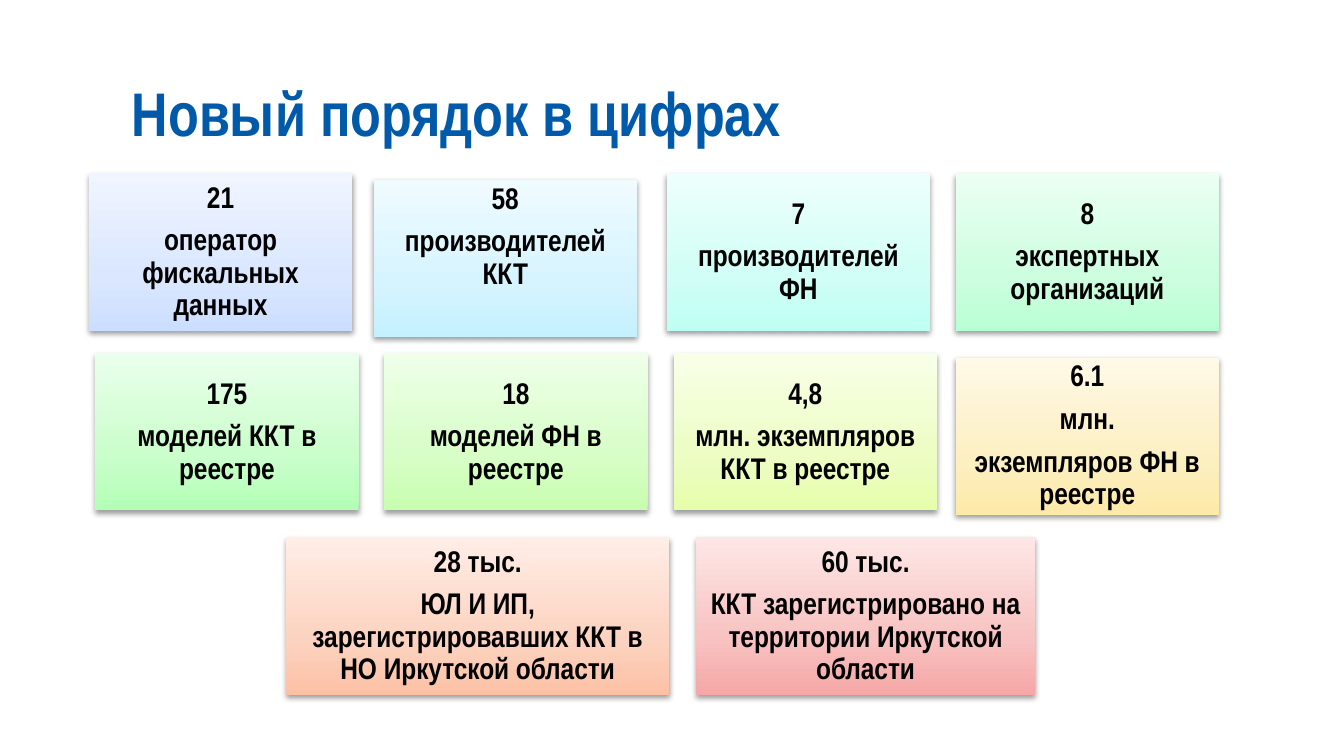
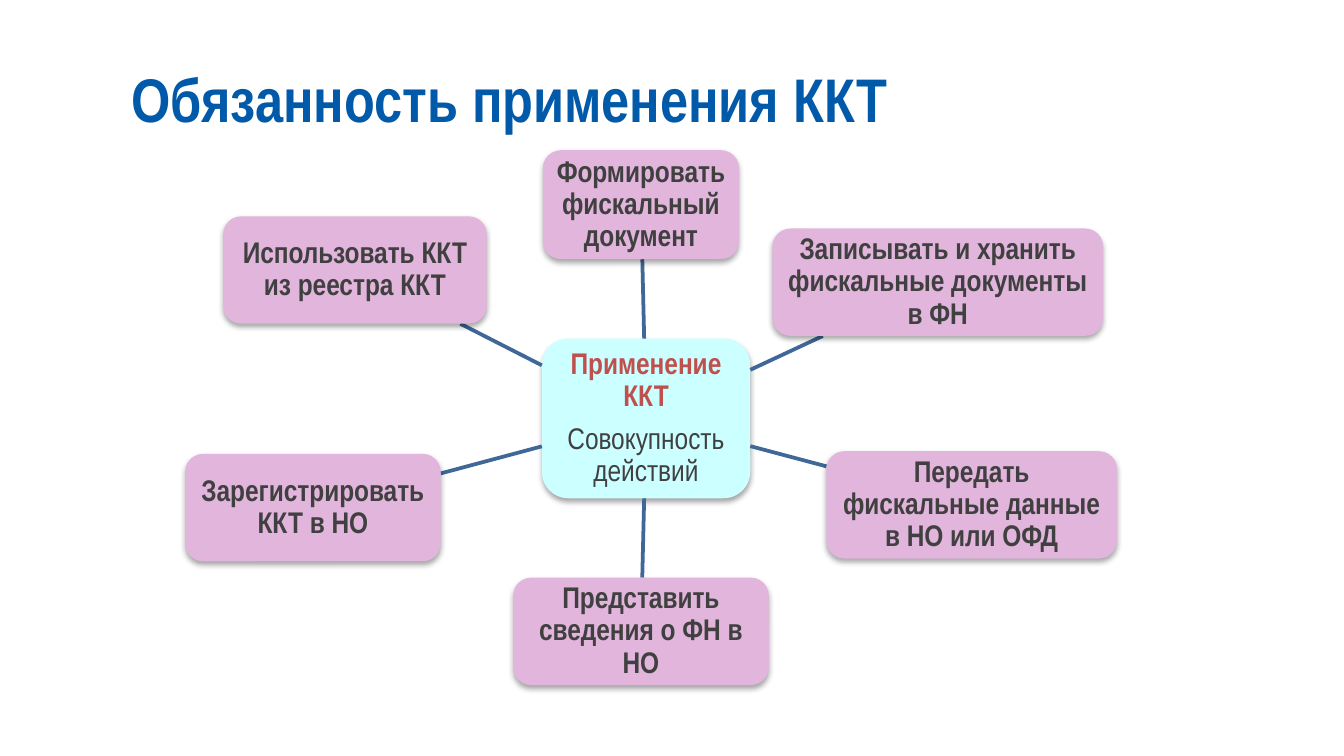
from copy import deepcopy

from lxml.etree import SubElement
from pptx import Presentation
from pptx.dml.color import RGBColor
from pptx.enum.shapes import MSO_CONNECTOR as CONNECTOR, MSO_SHAPE as SHAPE
from pptx.enum.text import MSO_ANCHOR as ANCHOR, MSO_AUTO_SIZE as AUTO, PP_ALIGN as ALIGN
from pptx.oxml.ns import qn
from pptx.util import Cm, Pt

FONT = "Arial Narrow"
TITLE_BLUE, BLACK, GREY, RED = "005AA9", "000000", "404040", "C0504D"
HUB_FILL, NODE_FILL, LINE_BLUE = "CCFFFF", "E1B5DC", "3F6797"

# All places are in centimetres: left, top, width, height.
CARD_W, CARD_H = 4.98, 2.97
CARD_INSET, NODE_INSET = 0.18, 0.1
TEXT_SIZE, PARA_GAP = 16, 5.6

# left, top, width, gradient from bottom to top, lines, extra bottom inset
CARDS = [
    (1.68, 3.28, CARD_W, ("CCDEFF", "DAE7FF", "F0F5FF"),
     ["21", "оператор фискальных данных"], 0),
    (7.06, 3.4, CARD_W, ("C5F0FF", "D6F4FF", "EFFBFF"),
     ["58", "производителей ККТ"], 0.81),
    (12.6, 3.28, CARD_W, ("BFFFF3", "D1FEF6", "EDFFFC"),
     ["7", "производителей ФН"], 0),
    (18.06, 3.28, CARD_W, ("B9FFD4", "CDFEE0", "EBFFF3"),
     ["8", "экспертных организаций"], 0),
    (1.8, 6.68, CARD_W, ("B4FFB6", "CAFECB", "EAFFEB"),
     ["175", "моделей ККТ в реестре"], 0),
    (7.26, 6.68, CARD_W, ("C8FEAF", "D7FEC7", "EFFFE9"),
     ["18", "моделей ФН в реестре"], 0),
    (12.73, 6.68, CARD_W, ("E6FEAB", "EDFDC4", "F8FFE8"),
     ["4,8", "млн. экземпляров ККТ в реестре"], 0),
    (18.06, 6.76, CARD_W, ("FDEAA8", "FCEFC2", "FFF9E7"),
     ["6.1", "млн.", "экземпляров ФН в реестре"], 0),
    (5.41, 10.16, 7.24, ("FCC1A5", "FCD3C0", "FFEDE6"),
     ["28 тыс.", "ЮЛ И ИП, зарегистрировавших ККТ в НО Иркутской области"], 0),
    (13.16, 10.16, 6.4, ("F6A7A6", "F7C2C1", "FDE7E6"),
     ["60 тыс.", "ККТ зарегистрировано на территории Иркутской области"], 0),
]

HUB = (10.24, 6.4, 3.94, 3.02)
HUB_TEXT = [("Применение ККТ", RED, True), ("Совокупность действий", GREY, False)]
NODES = [
    ((10.26, 2.84, 3.71, 2.06), "Формировать фискальный документ"),
    ((14.6, 4.32, 6.25, 2.03), "Записывать и хранить фискальные документы в ФН"),
    ((15.62, 8.53, 5.49, 2.03), "Передать фискальные данные в НО или ОФД"),
    ((9.7, 10.92, 4.83, 2.03), "Представить сведения о ФН в НО"),
    ((3.5, 8.58, 4.83, 2.03), "Зарегистрировать ККТ в НО"),
    ((4.22, 4.09, 4.98, 2.03), "Использовать ККТ из реестра ККТ"),
]


def rgb(color):
    return RGBColor.from_string(color)


def add_run(p, text, size, color, bold):
    r = p.add_run()
    r.text = text
    r.font.name, r.font.size, r.font.bold = FONT, Pt(size), bold
    r.font.color.rgb = rgb(color)


def set_frame(tf, side, top, bottom):
    tf.word_wrap, tf.auto_size = True, AUTO.NONE
    tf.vertical_anchor = ANCHOR.MIDDLE
    tf.margin_left = tf.margin_right = Cm(side)
    tf.margin_top, tf.margin_bottom = Cm(top), Cm(bottom)


def add_titled_slide(prs, title, height):
    s = prs.slides.add_slide(prs.slide_layouts[5])
    sp = s.shapes.title
    sp.left, sp.top, sp.width, sp.height = map(Cm, (2.26, 1.02, 20.4, height))
    set_frame(sp.text_frame, 0.23, 0.1, 0.1)
    p = sp.text_frame.paragraphs[0]
    p.alignment, p.line_spacing = ALIGN.LEFT, Pt(40.3)
    add_run(p, title, 33, TITLE_BLUE, True)
    return s


def add_shadow(sp, opacity, distance):
    """Replace the theme shadow by a soft one that falls straight down."""
    sp.shadow.inherit = False
    effects = sp._element.spPr.find(qn("a:effectLst"))
    shadow = SubElement(effects, qn("a:outerShdw"), blurRad=str(Pt(3.1)),
                        dist=str(Pt(distance)), dir="5400000", rotWithShape="0")
    color = SubElement(shadow, qn("a:srgbClr"), val=BLACK)
    SubElement(color, qn("a:alpha"), val=str(opacity * 1000))


def fill_gradient(sp, colors):
    """Fill upwards with three colours, the middle one at 35 %."""
    sp.fill.gradient()
    sp.fill.gradient_angle = 90
    first = sp._element.spPr.find(".//" + qn("a:gs"))
    first.addnext(deepcopy(first))
    for stop, position, color in zip(sp.fill.gradient_stops, (0, 0.35, 1), colors):
        stop.position = position
        stop.color.rgb = rgb(color)


def add_box(s, kind, box, lines, inset, extra_bottom=0):
    """Add a borderless shape with centred (text, colour, bold) paragraphs."""
    sp = s.shapes.add_shape(kind, *map(Cm, box))
    sp.line.fill.background()
    tf = sp.text_frame
    set_frame(tf, inset, inset, inset + extra_bottom)
    for i, (text, color, bold) in enumerate(lines):
        p = tf.add_paragraph() if i else tf.paragraphs[0]
        p.alignment, p.line_spacing, p.space_after = ALIGN.CENTER, 0.9, Pt(PARA_GAP)
        add_run(p, text, TEXT_SIZE, color, bold)
    return sp


def add_bubble(s, box, lines, color):
    sp = add_box(s, SHAPE.ROUNDED_RECTANGLE, box, lines, NODE_INSET)
    sp.fill.solid()
    sp.fill.fore_color.rgb = rgb(color)
    add_shadow(sp, 35, 1.8)


def center(box):
    x, y, w, h = box
    return x + w / 2, y + h / 2


def edge_point(box, other):
    """Where the line between the two centres leaves the first box."""
    (x, y), (ox, oy) = center(box), center(other)
    dx, dy = ox - x, oy - y
    reach = max(abs(dx) / (box[2] / 2), abs(dy) / (box[3] / 2))
    return x + dx / reach, y + dy / reach


def add_spoke(s, hub, node):
    ends = edge_point(hub, node) + edge_point(node, hub)
    line = s.shapes.add_connector(CONNECTOR.STRAIGHT, *map(Cm, ends))
    line.line.color.rgb = rgb(LINE_BLUE)
    line.line.width = Pt(2)
    SubElement(line._element.spPr, qn("a:effectLst"))


def build_figures(prs):
    s = add_titled_slide(prs, "Новый порядок в цифрах", 2.18)
    for x, y, w, colors, texts, extra in CARDS:
        lines = [(text, BLACK, True) for text in texts]
        sp = add_box(s, SHAPE.RECTANGLE, (x, y, w, CARD_H), lines, CARD_INSET, extra)
        fill_gradient(sp, colors)
        add_shadow(sp, 38, 1.6)


def build_duties(prs):
    s = add_titled_slide(prs, "Обязанность применения ККТ", 1.63)
    add_bubble(s, HUB, HUB_TEXT, HUB_FILL)
    for box, text in NODES:
        add_spoke(s, HUB, box)
        add_bubble(s, box, [(text, GREY, True)], NODE_FILL)


def main():
    prs = Presentation()
    prs.slide_width, prs.slide_height = Cm(25.4), Cm(14.29)
    build_figures(prs)
    build_duties(prs)
    prs.save("out.pptx")


if __name__ == "__main__":
    main()
